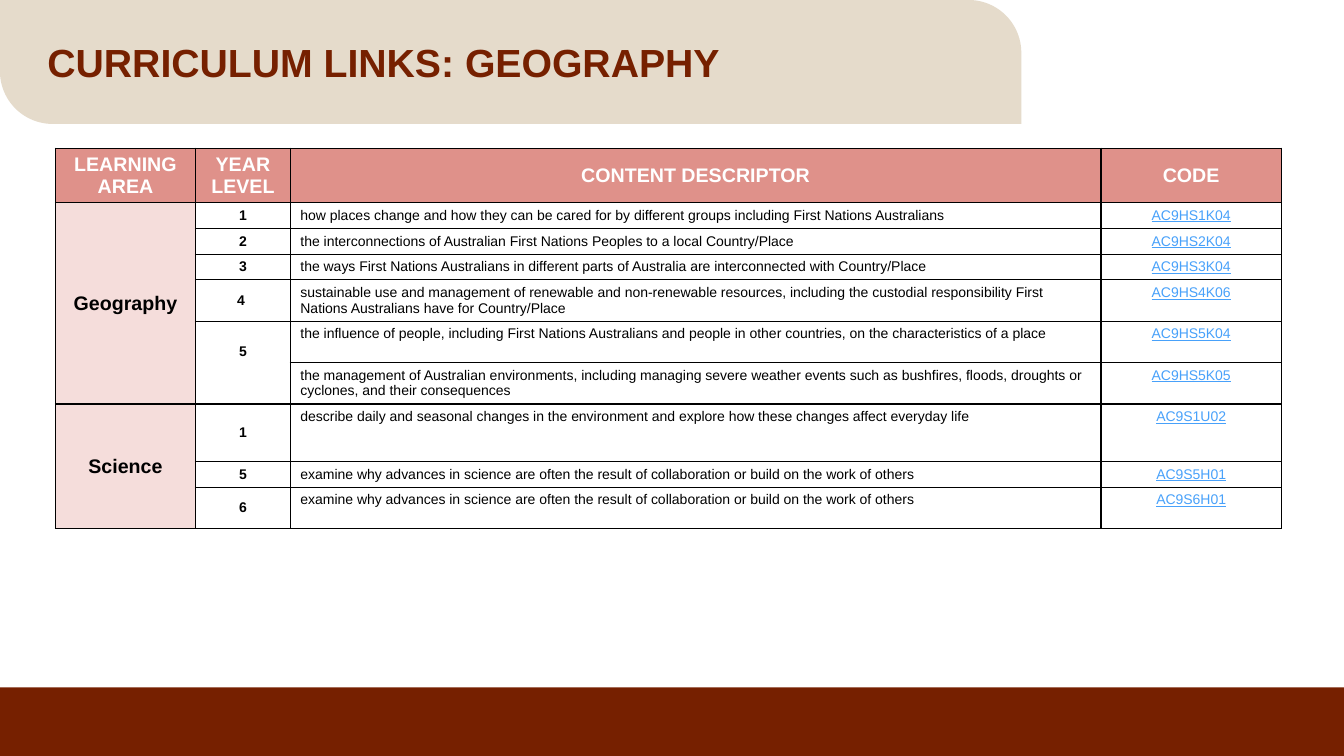
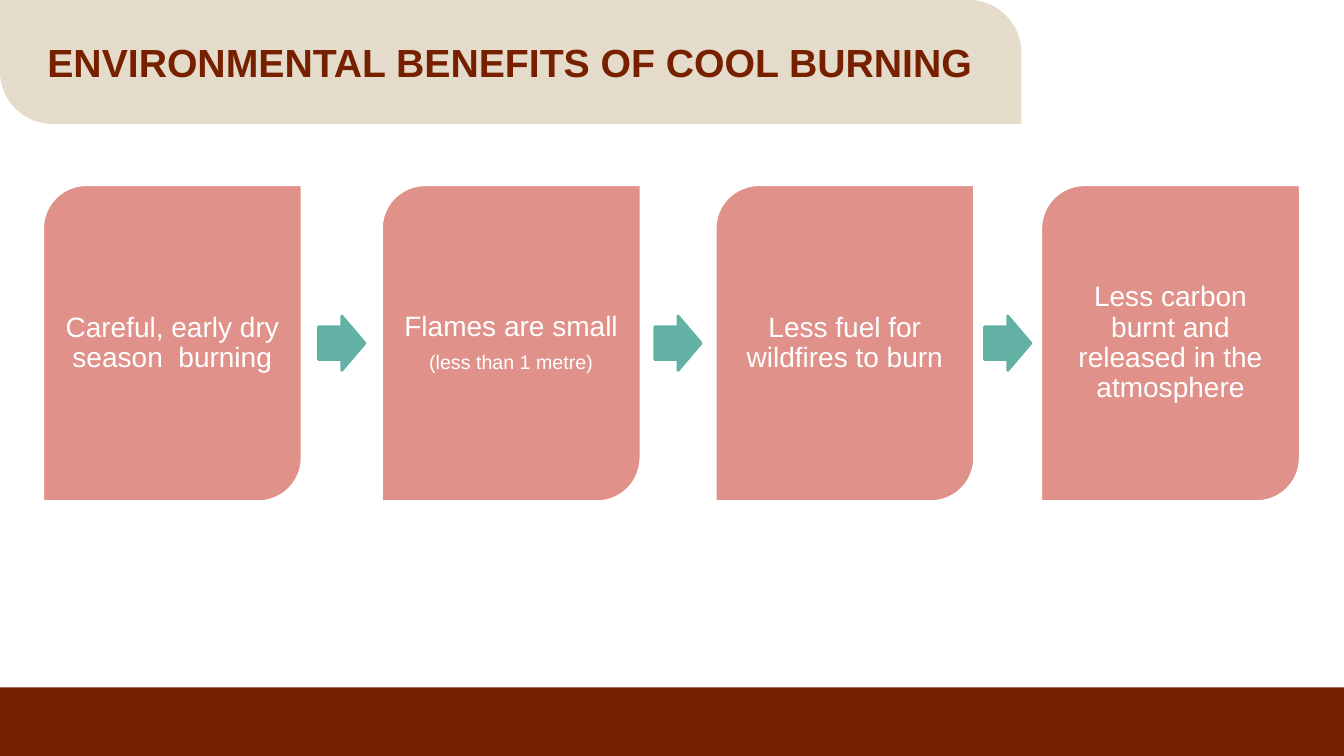
from lxml.etree import SubElement
from pptx import Presentation
from pptx.dml.color import RGBColor
from pptx.enum.shapes import MSO_SHAPE
from pptx.enum.text import MSO_ANCHOR, MSO_AUTO_SIZE, PP_ALIGN
from pptx.oxml import parse_xml
from pptx.oxml.ns import nsdecls, qn
from pptx.util import Inches, Pt

COLOURS = {
    "brown": "762000",
    "sand": "E5DBCB",
    "rose": "DF918A",
    "teal": "63B1A4",
    "link": "48A1FA",
    "white": "FFFFFF",
    "black": "000000",
}
FONT = "Arial"
TITLE_ONLY = 5

COLUMN_WIDTHS = [1.39, 0.94, 8.04, 1.79]
ROW_HEIGHTS = [0.54, 0.25, 0.25, 0.25, 0.41, 0.41, 0.41, 0.57, 0.25, 0.41]
HEADINGS = ["LEARNING AREA", "YEAR LEVEL", "CONTENT DESCRIPTOR", "CODE"]
# An empty area or year belongs to the cell above it.
LINKS = [
    ("Geography", "1", "how places change and how they can be cared for by different groups "
     "including First Nations Australians", "AC9HS1K04"),
    ("", "2", "the interconnections of Australian First Nations Peoples to a local "
     "Country/Place", "AC9HS2K04"),
    ("", "3", "the ways First Nations Australians in different parts of Australia are "
     "interconnected with Country/Place", "AC9HS3K04"),
    ("", "4 ", "sustainable use and management of renewable and non-renewable resources, "
     "including the custodial responsibility First Nations Australians have for "
     "Country/Place", "AC9HS4K06"),
    ("", "5", "the influence of people, including First Nations Australians and people in "
     "other countries, on the characteristics of a place", "AC9HS5K04"),
    ("", "", "the management of Australian environments, including managing severe weather "
     "events such as bushfires, floods, droughts or cyclones, and their consequences",
     "AC9HS5K05"),
    ("Science", "1", "describe daily and seasonal changes in the environment and explore how "
     "these changes affect everyday life", "AC9S1U02"),
    ("", "5", "examine why advances in science are often the result of collaboration or "
     "build on the work of others", "AC9S5H01"),
    ("", "6", "examine why advances in science are often the result of collaboration or "
     "build on the work of others", "AC9S6H01"),
]

CARD_TOP, CARD_WIDTH, CARD_HEIGHT = 1.84, 2.56, 3.13
ARROW_WIDTH, ARROW_HEIGHT = 0.46, 0.54
BENEFITS = [
    (0.43, [("Careful, early dry season  burning", 20)]),
    (3.79, [("Flames are small ", 20), ("(less than 1 metre)", 14)]),
    (7.10, [("Less fuel for wildfires to burn", 20)]),
    (10.33, [("Less carbon burnt and released in the atmosphere", 20)]),
]


def colour(name):
    return RGBColor.from_string(COLOURS[name])


class Deck:
    def __init__(self):
        self.deck = Presentation()
        self.deck.slide_width = Inches(13.33)
        self.deck.slide_height = Inches(7.5)
        self.layout = self.deck.slide_layouts[TITLE_ONLY]
        self.page = None

    def add_page(self, title, title_width):
        first = self.page is None
        self.page = self.deck.slides.add_slide(self.layout)
        if first:
            self.dress_layout()
        box = self.page.shapes.title
        box.left, box.top = Inches(0.37), Inches(0.21)
        box.width, box.height = Inches(title_width), Inches(0.87)
        box.text_frame.auto_size = MSO_AUTO_SIZE.NONE
        box.text_frame.vertical_anchor = MSO_ANCHOR.MIDDLE
        para = box.text_frame.paragraphs[0]
        para.line_spacing = 0.9
        self.add_text(para, title, 28, "brown", bold=True, align=PP_ALIGN.LEFT)

    def dress_layout(self):
        """Draw the bands that every page shares and move them into the layout."""
        footer = self.shape(MSO_SHAPE.RECTANGLE, 0, 6.82, 13.33, 0.68, "brown")
        header = self.shape(MSO_SHAPE.ROUND_2_DIAG_RECTANGLE, 0, 0, 10.13, 1.23, "sand")
        header.adjustments[0], header.adjustments[1] = 0, 0.425
        for number, band in enumerate([footer, header]):
            band.element.nvSpPr.cNvPr.set("id", str(101 + number))
            self.layout.shapes.element.insert(2 + number, band.element)

    def shape(self, kind, left, top, width, height, fill, line=None, line_width=1):
        shape = self.page.shapes.add_shape(
            kind, Inches(left), Inches(top), Inches(width), Inches(height))
        shape.shadow.inherit = False
        shape.fill.solid()
        shape.fill.fore_color.rgb = colour(fill)
        if line:
            shape.line.color.rgb = colour(line)
            shape.line.width = Pt(line_width)
        else:
            shape.line.fill.background()
        return shape

    def add_text(self, para, text, size, ink, bold=False, underline=False,
                 align=PP_ALIGN.CENTER):
        para.alignment = align
        span = para.add_run()
        span.text = text
        span.font.name = FONT
        span.font.size = Pt(size)
        span.font.bold = bold
        span.font.underline = underline
        span.font.color.rgb = colour(ink)

    def card(self, left, lines):
        card = self.shape(MSO_SHAPE.ROUND_2_DIAG_RECTANGLE, left, CARD_TOP,
                          CARD_WIDTH, CARD_HEIGHT, "rose", "white")
        frame = card.text_frame
        frame.word_wrap = True
        frame.vertical_anchor = MSO_ANCHOR.MIDDLE
        frame.margin_left = frame.margin_right = Inches(0.08)
        frame.margin_top = frame.margin_bottom = Inches(0.08)
        for index, (text, size) in enumerate(lines):
            para = frame.add_paragraph() if index else frame.paragraphs[0]
            para.line_spacing = 0.9
            if index:
                para.space_before = Pt(7)
            self.add_text(para, text, size, "white")

    def arrow(self, centre):
        arrow = self.shape(MSO_SHAPE.RIGHT_ARROW, centre - ARROW_WIDTH / 2,
                           CARD_TOP + (CARD_HEIGHT - ARROW_HEIGHT) / 2,
                           ARROW_WIDTH, ARROW_HEIGHT, "teal", "teal", 2)
        arrow.adjustments[0], arrow.adjustments[1] = 0.6, 0.5

    def table(self, left, top, widths, heights):
        frame = self.page.shapes.add_table(
            len(heights), len(widths), Inches(left), Inches(top),
            Inches(sum(widths)), Inches(sum(heights)))
        table = frame.table
        table.first_row = table.horz_banding = False
        for column, width in zip(table.columns, widths):
            column.width = Inches(width)
        for row, height in zip(table.rows, heights):
            row.height = Inches(height)
        return table

    def cell(self, cell, text, size=10, ink="black", fill=None, opacity=100,
             anchor=MSO_ANCHOR.MIDDLE, **style):
        properties = cell._tc.get_or_add_tcPr()
        for side in ("lnL", "lnR", "lnT", "lnB"):
            properties.append(parse_xml(
                f'<a:{side} {nsdecls("a")} w="12700"><a:solidFill>'
                f'<a:srgbClr val="{COLOURS["black"]}"/></a:solidFill></a:{side}>'))
        if fill:
            cell.fill.solid()
            cell.fill.fore_color.rgb = colour(fill)
            if opacity < 100:
                tint = properties.find(qn("a:solidFill")).find(qn("a:srgbClr"))
                SubElement(tint, qn("a:alpha")).set("val", str(opacity * 1000))
        else:
            cell.fill.background()
        cell.vertical_anchor = anchor
        if text:
            self.add_text(cell.text_frame.paragraphs[0], text, size, ink, **style)


def merge_blanks(table, column, texts):
    """Join each filled cell below the heading with the blank cells under it."""
    starts = [row for row, text in enumerate(texts, 1) if text]
    for start, following in zip(starts, starts[1:] + [len(texts) + 1]):
        if following - start > 1:
            table.cell(start, column).merge(table.cell(following - 1, column))


def curriculum_page(deck):
    deck.add_page("CURRICULUM LINKS: GEOGRAPHY", 9.37)
    table = deck.table(0.55, 1.47, COLUMN_WIDTHS, ROW_HEIGHTS)
    for column, heading in enumerate(HEADINGS):
        deck.cell(table.cell(0, column), heading, 14, "white", "rose", bold=True)
    column_styles = [
        dict(size=14, fill="rose", opacity=30, bold=True),
        dict(bold=True),
        dict(anchor=MSO_ANCHOR.TOP, align=PP_ALIGN.LEFT),
        dict(anchor=MSO_ANCHOR.TOP, ink="link", underline=True),
    ]
    for row, texts in enumerate(LINKS, 1):
        for column, (text, style) in enumerate(zip(texts, column_styles)):
            deck.cell(table.cell(row, column), text, **style)
    for column in (0, 1):
        merge_blanks(table, column, [texts[column] for texts in LINKS])
    table.cell(5, 1).margin_bottom = Inches(0.27)


def benefits_page(deck):
    deck.add_page("ENVIRONMENTAL BENEFITS OF COOL BURNING", 10.13)
    previous_right = None
    for left, lines in BENEFITS:
        if previous_right:
            deck.arrow((previous_right + left) / 2)
        deck.card(left, lines)
        previous_right = left + CARD_WIDTH


def main():
    deck = Deck()
    curriculum_page(deck)
    benefits_page(deck)
    deck.deck.save("out.pptx")


if __name__ == "__main__":
    main()
